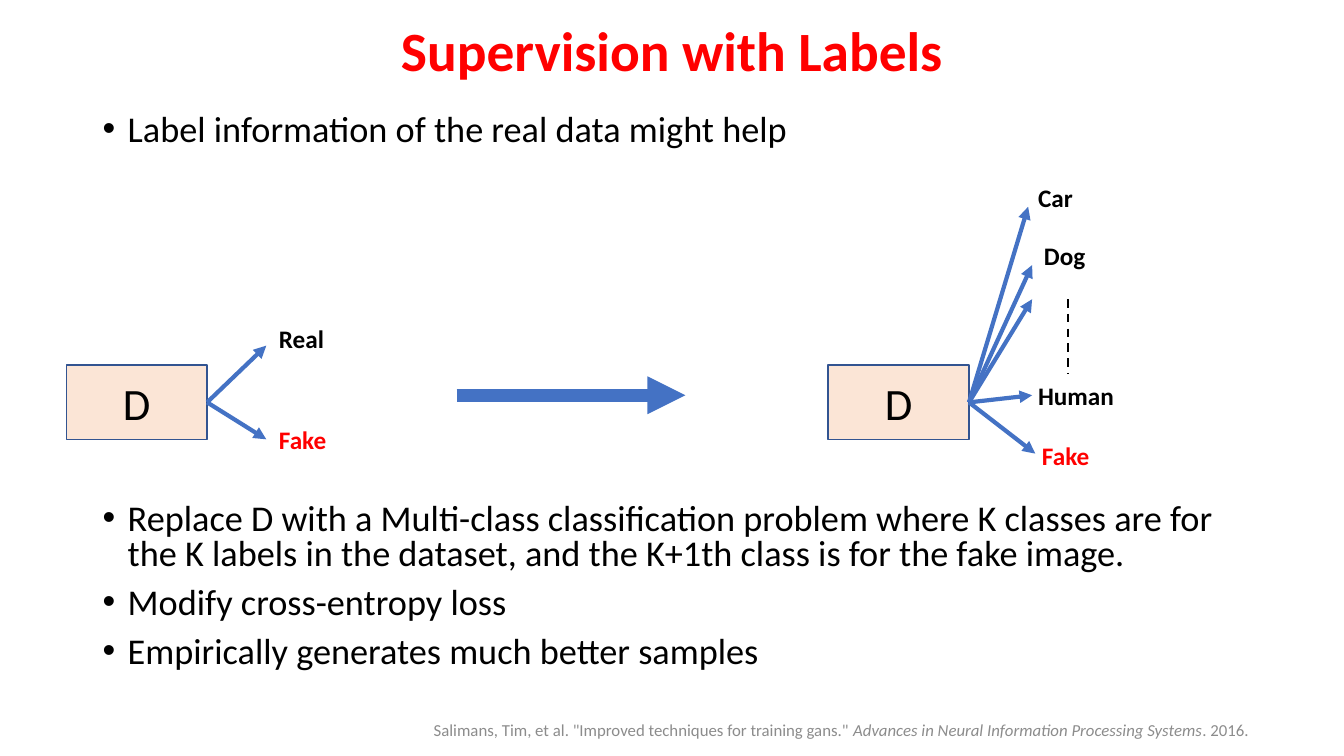
from lxml.etree import SubElement
from pptx import Presentation
from pptx.dml.color import RGBColor
from pptx.enum.dml import MSO_LINE
from pptx.enum.shapes import MSO_CONNECTOR, MSO_SHAPE
from pptx.enum.text import MSO_ANCHOR, MSO_AUTO_SIZE, PP_ALIGN
from pptx.oxml.ns import qn
from pptx.util import Cm, Pt

HUES = {"red": "FF0000", "black": "000000", "gray": "8C8C8C",
        "blue": "4472C4", "edge": "325491", "peach": "FBE5D6"}


def add_run(para, text, size, hue="black", bold=False, italic=False):
    run = para.add_run()
    run.text = text
    font = run.font
    font.name, font.size = "Calibri", Pt(size)
    font.bold, font.italic = bold, italic
    font.color.rgb = RGBColor.from_string(HUES[hue])


def add_line(start, end, width, hue="blue", arrow=True):
    line = slide.shapes.add_connector(
        MSO_CONNECTOR.STRAIGHT, *[Cm(v) for v in start + end])
    line.line.width = Pt(width)
    line.line.color.rgb = RGBColor.from_string(HUES[hue])
    if arrow:
        SubElement(line.line._get_or_add_ln(), qn("a:tailEnd"), type="triangle")
    SubElement(line._element.spPr, qn("a:effectLst"))
    return line


deck = Presentation()
deck.slide_width, deck.slide_height = Cm(33.87), Cm(19.05)
slide = deck.slides.add_slide(deck.slide_layouts[1])

# Title and body placeholders
title, body = slide.placeholders
for holder, top, height in [(title, 0.66, 1.37), (body, 2.77, 14.4)]:
    holder.left, holder.top = Cm(2.33), Cm(top)
    holder.width, holder.height = Cm(29.21), Cm(height)
    holder.text_frame.auto_size = MSO_AUTO_SIZE.NONE
    holder.text_frame.word_wrap = True

title.text_frame.vertical_anchor = MSO_ANCHOR.MIDDLE
para = title.text_frame.paragraphs[0]
para.alignment, para.line_spacing = PP_ALIGN.CENTER, 0.9
add_run(para, "Supervision with Labels", 39.6, "red", bold=True)

# Bullets, with a wide gap for the diagram after the first
points = [
    ("Label information of the real data might help", 0),
    ("Replace D with a Multi-class classification problem where K classes are "
     "for the K labels in the dataset, and the K+1th class is for the fake "
     "image.", 253),
    ("Modify cross-entropy loss", 10),
    ("Empirically generates much better samples", 10),
]
frame = body.text_frame
frame.vertical_anchor = MSO_ANCHOR.TOP
for i, (text, gap) in enumerate(points):
    para = frame.add_paragraph() if i else frame.paragraphs[0]
    props = para._p.get_or_add_pPr()
    props.set("marL", str(Cm(0.635)))
    props.set("indent", str(-Cm(0.635)))
    para.line_spacing, para.space_before = 0.8, Pt(gap)
    add_run(para, text, 25.9)

# Citation
cite = slide.shapes.add_textbox(Cm(2.51), Cm(17.88), Cm(29.21), Cm(1.02))
cite.text_frame.word_wrap = True
cite.text_frame.vertical_anchor = MSO_ANCHOR.MIDDLE
para = cite.text_frame.paragraphs[0]
para.alignment = PP_ALIGN.RIGHT
for text, italic in [
        ('Salimans, Tim, et al. "Improved techniques for training gans." ', False),
        ("Advances in Neural Information Processing Systems", True),
        (". 2016.", False)]:
    add_run(para, text, 12, "gray", italic=italic)

# Discriminators: box left, then (label, label place, arrow tip, label width)
nets = [
    (1.67, [("Real", (6.78, 8.03), (6.71, 8.71), 2),
            ("Fake", (6.78, 10.57), (6.71, 11.07), 2)]),
    (20.87, [("Car", (25.91, 4.47), (25.91, 5.21), 2),
             ("Dog", (26.06, 5.94), (26.01, 6.68), 2),
             (None, None, (26.01, 7.54), 0),
             ("Human", (25.91, 9.45), (26.01, 9.96), 2.62),
             ("Fake", (26.01, 10.97), (26.09, 11.43), 2)]),
]
for left, outs in nets:
    box = slide.shapes.add_shape(
        MSO_SHAPE.RECTANGLE, Cm(left), Cm(9.2), Cm(3.55), Cm(1.88))
    box.shadow.inherit = False
    box.fill.solid()
    box.fill.fore_color.rgb = RGBColor.from_string(HUES["peach"])
    box.line.color.rgb = RGBColor.from_string(HUES["edge"])
    box.line.width = Pt(1)
    box.text_frame.vertical_anchor = MSO_ANCHOR.MIDDLE
    para = box.text_frame.paragraphs[0]
    para.alignment = PP_ALIGN.CENTER
    add_run(para, "D", 32)
    for name, place, tip, width in outs:
        add_line((left + 3.55, 10.14), tip, 3).begin_connect(box, 3)
        if name:
            label = slide.shapes.add_textbox(
                *[Cm(v) for v in place], Cm(width), Cm(1.02))
            label.text_frame.word_wrap = True
            hue = "red" if name == "Fake" else "black"
            add_run(label.text_frame.paragraphs[0], name, 18, hue, bold=True)

# Dashed line for further classes, and the arrow between the two halves
dash = add_line((26.92, 7.54), (26.92, 9.42), 1.5, "black", arrow=False)
dash.line.dash_style = MSO_LINE.DASH
add_line((11.51, 9.96), (17.27, 9.96), 9)

deck.save("out.pptx")
